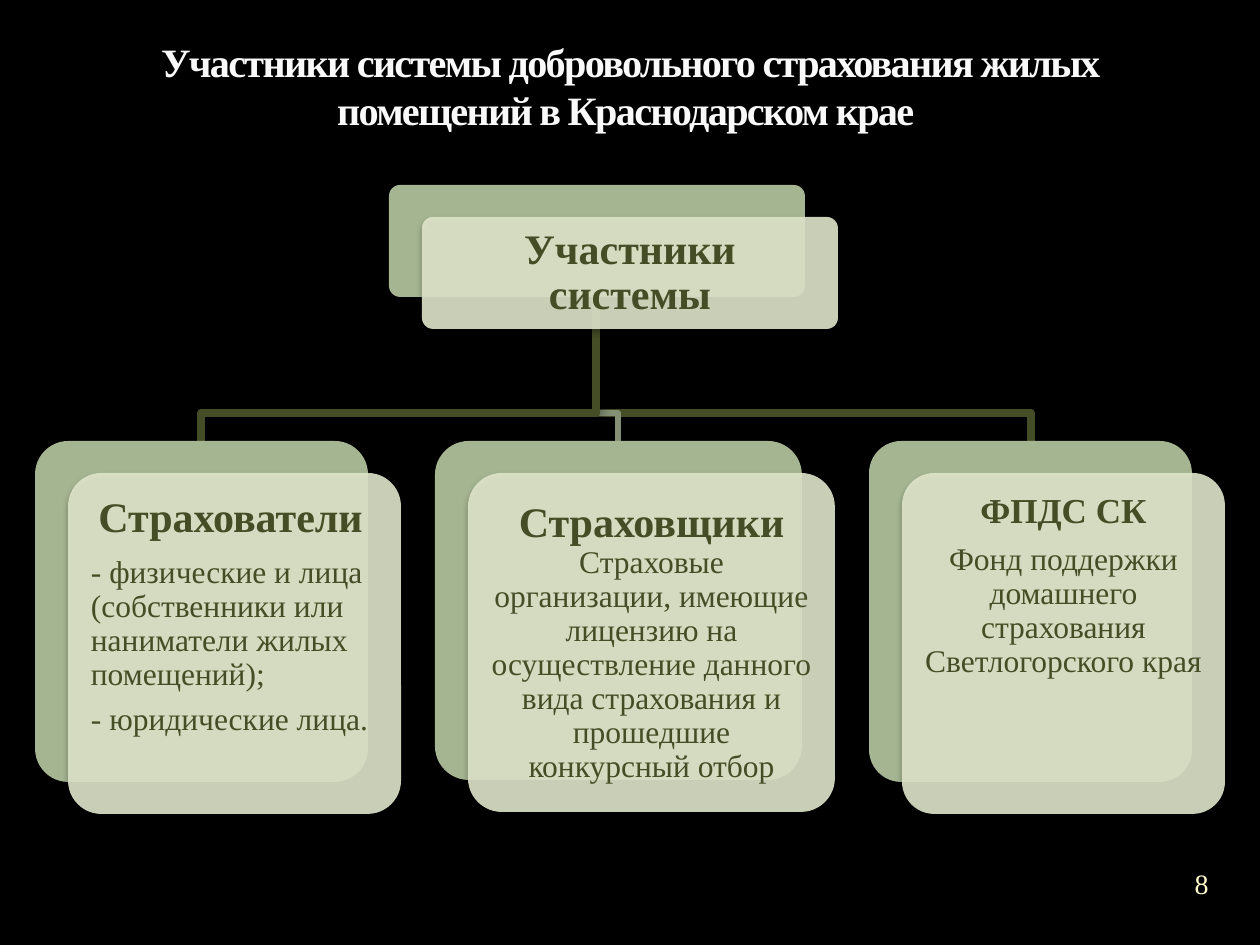
from lxml import etree
from pptx import Presentation
from pptx import util as u
from pptx.dml.color import RGBColor
from pptx.enum import shapes, text
from pptx.oxml.ns import qn

SCALE = 914400 / 126
FONT = "Times New Roman"
BLACK = RGBColor(0x00, 0x00, 0x00)
WHITE = RGBColor(0xF9, 0xF9, 0xF9)
CREAM = RGBColor(0xFE, 0xFA, 0xC9)
OLIVE = RGBColor(0x44, 0x4D, 0x26)
MOSS = RGBColor(0x84, 0x91, 0x75)
SAGE = RGBColor(0xA5, 0xB5, 0x92)
PALE = RGBColor(0xDF, 0xE5, 0xCA)
CENTER, LEFT = text.PP_ALIGN.CENTER, text.PP_ALIGN.LEFT
TOP, MIDDLE, BOTTOM = (text.MSO_ANCHOR.TOP, text.MSO_ANCHOR.MIDDLE,
                       text.MSO_ANCHOR.BOTTOM)
SHIFT_X, SHIFT_Y = 33, 32


def px(length):
    return u.Emu(round(length * SCALE))


def set_alpha(color, percent):
    etree.SubElement(color, qn("a:alpha"), val=str(percent * 1000))


def add_shadow(shape, alpha, blur, distance):
    effects = shape._element.spPr.find(qn("a:effectLst"))
    shadow = etree.SubElement(
        effects, qn("a:outerShdw"), blurRad=str(u.Pt(blur)),
        dist=str(u.Pt(distance)), dir="5400000", rotWithShape="0")
    set_alpha(etree.SubElement(shadow, qn("a:srgbClr"), val=str(BLACK)), alpha)


def add_text(page, box, paragraphs, color, anchor=TOP, inset=0, spaced=False):
    frame = page.shapes.add_textbox(*map(px, box)).text_frame
    frame.word_wrap = True
    frame.vertical_anchor = anchor
    frame.margin_left = frame.margin_right = px(inset)
    frame.margin_top = frame.margin_bottom = px(inset)
    for index, (align, spans) in enumerate(paragraphs):
        para = frame.paragraphs[0] if index == 0 else frame.add_paragraph()
        para.alignment = align
        para.font.name = FONT
        para.font.color.rgb = color
        if spaced:
            para.line_spacing = 0.9
            para.space_after = u.Pt(0.35 * spans[0][1])
        for words, size, bold in spans:
            span = para.add_run()
            span.text = words
            span.font.size = u.Pt(size)
            span.font.bold = bold
    return frame


def add_title(page, box):
    words = ("Участники системы добровольного страхования жилых "
             "помещений в Краснодарском крае ")
    frame = add_text(page, box, [(CENTER, [(words, 23, True)])],
                     WHITE, BOTTOM, 6)
    frame.paragraphs[0].runs[0].font._element.set("spc", "-100")


def add_branch(page, start, end, color, width, shadowed):
    (x, y), (end_x, end_y) = start, end
    bend = end_y - 28
    builder = page.shapes.build_freeform(px(x), px(y))
    builder.add_line_segments(
        [(px(x), px(bend)), (px(end_x), px(bend)), (px(end_x), px(end_y))],
        close=False)
    branch = builder.convert_to_shape()
    branch.shadow.inherit = False
    branch.fill.background()
    branch.line.color.rgb = color
    branch.line.width = u.Pt(width)
    if shadowed:
        add_shadow(branch, 50, 7.5, 0)


def add_panel(page, box, color):
    panel = page.shapes.add_shape(
        shapes.MSO_SHAPE.ROUNDED_RECTANGLE, *map(px, box))
    panel.adjustments[0] = 0.1
    panel.shadow.inherit = False
    panel.fill.solid()
    panel.fill.fore_color.rgb = color
    panel.line.fill.background()
    return panel


def add_card(page, box, paragraphs, anchor=TOP, pad=10, inset=13):
    left, top, width, height = box
    add_panel(page, box, SAGE)
    left, top = left + SHIFT_X, top + SHIFT_Y
    front = add_panel(page, (left, top, width, height), PALE)
    set_alpha(front._element.spPr.find(".//" + qn("a:srgbClr")), 90)
    add_shadow(front, 32, 3.5, 2.2)
    inner = (left + pad, top + pad, width - 2 * pad, height - 2 * pad)
    add_text(page, inner, paragraphs, OLIVE, anchor, inset, True)


def add_chart_of_participants(page, box):
    left, top, width, height = box
    row = top + 256
    trunk = (left + 561, top + 112)
    for x, color, line_width, shadowed in (
            (996, OLIVE, 5, True), (583, MOSS, 3, False),
            (166, OLIVE, 5, True)):
        add_branch(page, trunk, (left + x, row), color, line_width, shadowed)

    add_card(page, (left + 354, top, 416, 112),
             [(CENTER, [("Участники системы", 24, True)])], MIDDLE, pad=3)
    add_card(page, (left, row, 333, 341), [
        (CENTER, [("Страхователи", 24, True), (" ", 18, False)]),
        (LEFT, [("- физические и лица (собственники или наниматели "
                 "жилых помещений);", 18, False)]),
        (LEFT, [("- юридические лица.", 18, False)])])
    add_card(page, (left + 400, row, 367, 339), [
        (CENTER, [("Страховщики", 24, True),
                  (" Страховые организации, имеющие лицензию на "
                   "осуществление данного вида страхования и прошедшие "
                   "конкурсный отбор", 18, False)])], MIDDLE)
    add_card(page, (left + 834, row, 323, 341), [
        (CENTER, [("ФПДС СК", 20, True)]),
        (CENTER, [("Фонд поддержки домашнего страхования "
                   "Светлогорского края", 18, False)])], inset=10)


def add_page_number(page, box):
    add_text(page, box, [(CENTER, [("8", 16, False)])], CREAM, MIDDLE)


def main():
    deck = Presentation()
    deck.slide_width, deck.slide_height = px(1260), px(945)
    page = deck.slides.add_slide(deck.slide_layouts[6])
    page.background.fill.solid()
    page.background.fill.fore_color.rgb = BLACK
    add_page_number(page, (1159, 852, 85, 63))
    add_title(page, (63, 66, 1134, 74))
    add_chart_of_participants(page, (35, 185, 1190, 629))
    deck.save("out.pptx")


if __name__ == "__main__":
    main()
